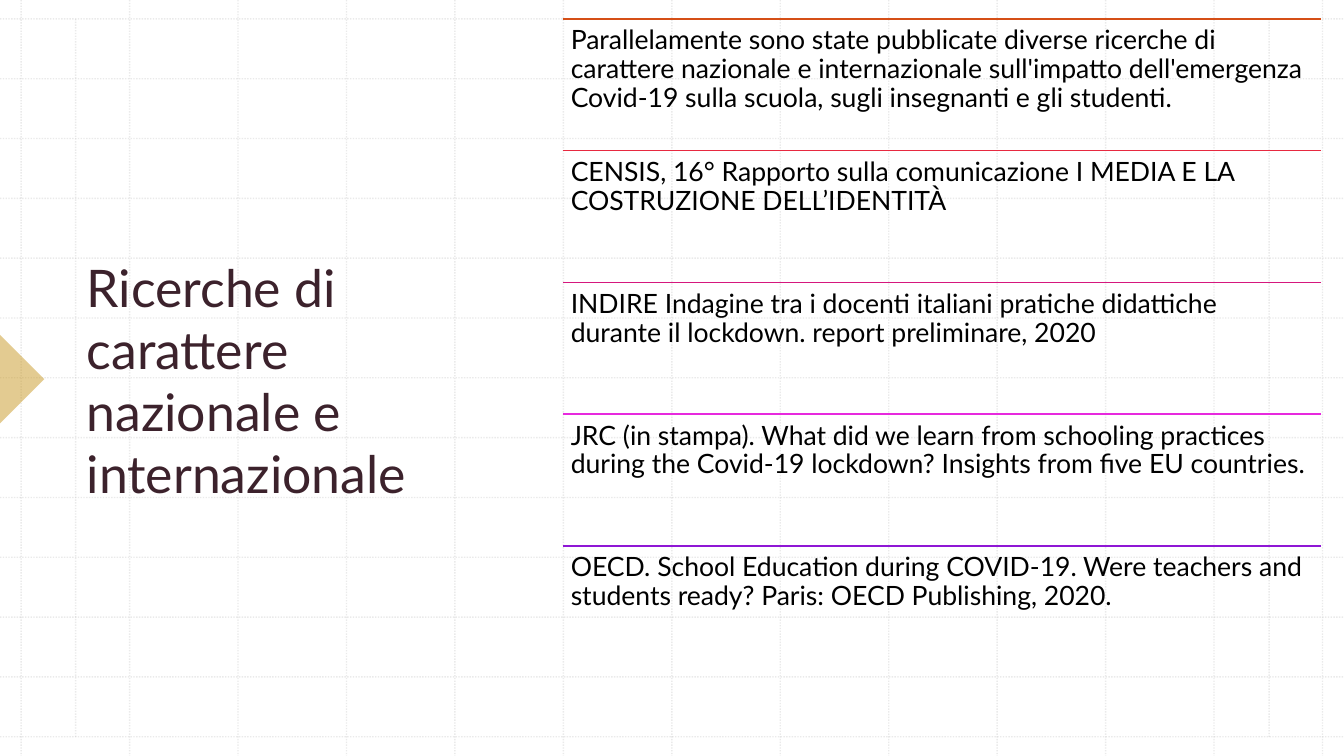
import pptx
import pptx.dml.color
import pptx.enum.dml
import pptx.enum.shapes
import pptx.enum.text
import pptx.oxml
import pptx.oxml.ns
import pptx.util

Pt = pptx.util.Pt
COLORS = {
    "grid": "BCBCBC",
    "marker": "C99924",
    "title": "3C222C",
    "body": "000000",
    "orange": "D54F17",
    "red": "E72940",
    "magenta": "D5177D",
    "pink": "E729DE",
    "violet": "8F17D5",
}
TITLE = "Ricerche di carattere nazionale e internazionale"
STUDIES = [
    ("orange", "Parallelamente sono state pubblicate diverse ricerche di carattere nazionale e "
               "internazionale sull'impatto dell'emergenza Covid-19 sulla scuola, sugli insegnanti "
               "e gli studenti."),
    ("red", "CENSIS, 16° Rapporto sulla comunicazione I MEDIA E LA COSTRUZIONE DELL’IDENTITÀ"),
    ("magenta", "INDIRE Indagine tra i docenti italiani pratiche didattiche durante il lockdown. "
                "report preliminare, 2020"),
    ("pink", "JRC (in stampa). What did we learn from schooling practices during the Covid-19 "
             "lockdown? Insights from five EU countries."),
    ("violet", "OECD. School Education during COVID-19. Were teachers and students ready? "
               "Paris: OECD Publishing, 2020."),
]


def rgb(name):
    return pptx.dml.color.RGBColor.from_string(COLORS[name])


def apply(target, values):
    for name, value in values.items():
        setattr(target, name, value)


def add_alpha(fill_owner, percent):
    color = next(fill_owner.iter(pptx.oxml.ns.qn("a:srgbClr")))
    alpha = pptx.oxml.parse_xml(
        f'<a:alpha {pptx.oxml.ns.nsdecls("a")} val="{percent * 1000}"/>')
    color.append(alpha)


def add_line(page, start, end, color):
    line = page.shapes.add_connector(
        pptx.enum.shapes.MSO_CONNECTOR.STRAIGHT, *map(Pt, start + end))
    line.line.color.rgb = rgb(color)
    line.line.width = Pt(1)
    line._element.spPr.append(
        pptx.oxml.parse_xml(f'<a:effectLst {pptx.oxml.ns.nsdecls("a")}/>'))
    return line


def add_text(page, box, text, inset, anchor, spacing, size, color):
    frame = page.shapes.add_textbox(*map(Pt, box)).text_frame
    apply(frame, {
        "word_wrap": True,
        "vertical_anchor": anchor,
        "margin_left": Pt(inset),
        "margin_right": Pt(inset),
        "margin_top": Pt(inset),
        "margin_bottom": Pt(inset),
    })
    para = frame.paragraphs[0]
    para.line_spacing = spacing
    span = para.add_run()
    span.text = text
    apply(span.font, {"name": "Lato", "size": Pt(size)})
    span.font.color.rgb = rgb(color)


def draw_grid(page, box):
    left, top, width, height = box
    first_column, column_step = left + 15.12, 77.46
    first_row, row_step = top + 13.5, 42.73
    last_row = first_row + 12 * row_step
    ends = []
    for index in range(13):
        x = first_column + index * column_step
        y = first_row + index * row_step
        ends.append(((x, top), (x, top + height)))
        ends.append(((left, y), (left + width, y)))
    for x in (left + 54, left + 906.5):
        ends.append(((x, first_row), (x, last_row)))
    for start, end in ends:
        line = add_line(page, start, end, "grid")
        line.line.dash_style = pptx.enum.dml.MSO_LINE.ROUND_DOT
        add_alpha(line._element.spPr, 30)


def draw_marker(page, box):
    marker = page.shapes.add_shape(
        pptx.enum.shapes.MSO_SHAPE.RIGHT_TRIANGLE, *map(Pt, box))
    marker.rotation = 225
    marker.shadow.inherit = False
    marker.fill.solid()
    marker.fill.fore_color.rgb = rgb("marker")
    marker.line.fill.background()
    add_alpha(marker._element.spPr, 50)


def draw_title(page, box):
    add_text(page, box, TITLE, 7.2, pptx.enum.text.MSO_ANCHOR.MIDDLE, 1.0, 37, "title")


def draw_studies(page, box):
    left, top, width, height = box
    step = height / len(STUDIES)
    for index, (color, text) in enumerate(STUDIES):
        y = top + index * step
        add_line(page, (left, y), (left + width, y), color)
        add_text(page, (left, y, width, step), text, 5.7,
                 pptx.enum.text.MSO_ANCHOR.TOP, 0.9, 19, "body")


def main():
    deck = pptx.Presentation()
    apply(deck, {"slide_width": Pt(960), "slide_height": Pt(540)})
    page = deck.slides.add_slide(deck.slide_layouts[6])
    draw_grid(page, (0, 0, 960, 540))
    draw_marker(page, (-22.4, 248.4, 44.8, 44.8))
    draw_title(page, (54.8, 57, 270, 428.4))
    draw_studies(page, (402, 13.5, 541.5, 470.5))
    deck.save("out.pptx")


if __name__ == "__main__":
    main()
